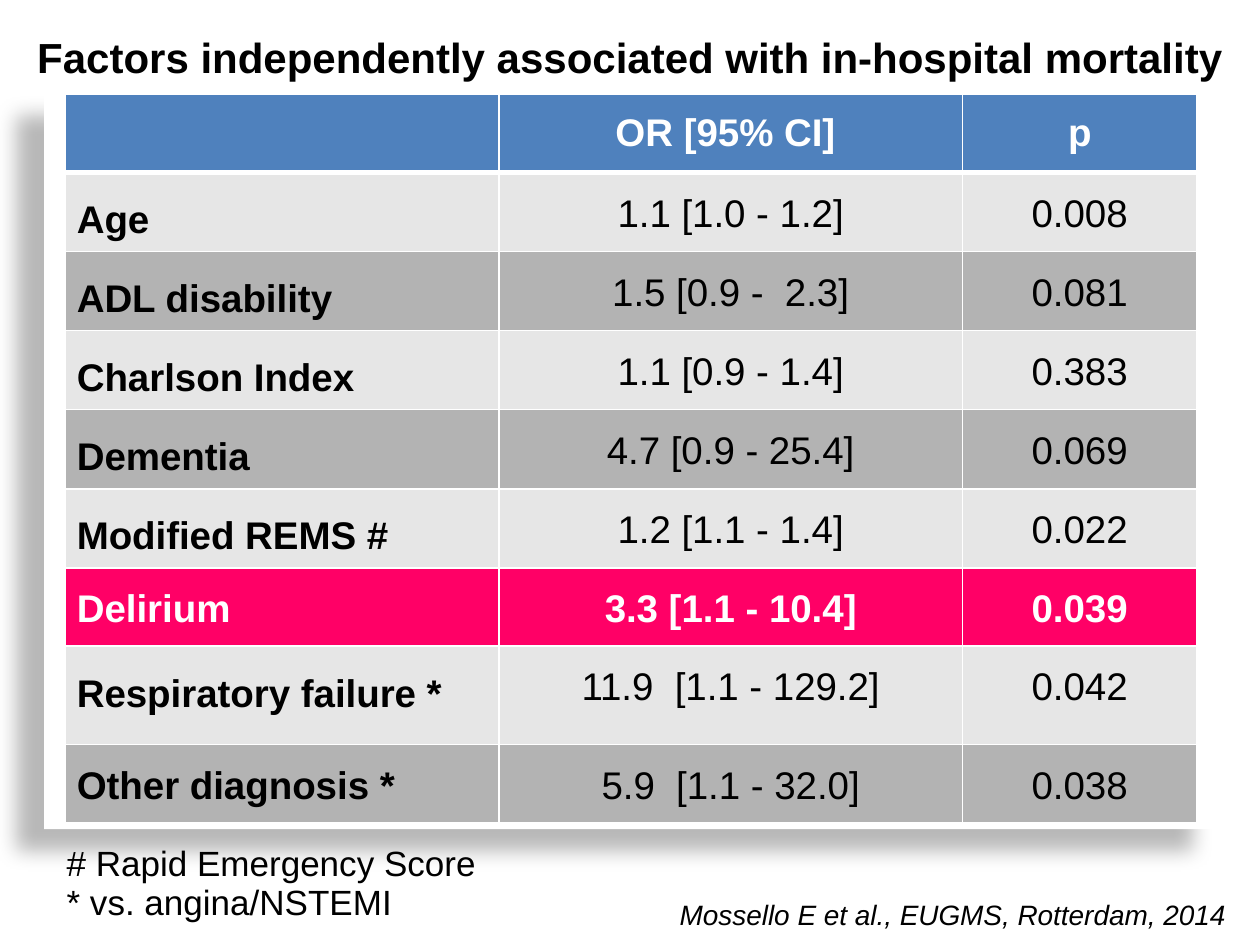
from dataclasses import dataclass

from lxml.etree import SubElement
from pptx import Presentation
from pptx.dml.color import RGBColor as RGB
from pptx.enum.shapes import MSO_SHAPE as Shape
from pptx.enum.text import MSO_ANCHOR as Anchor, MSO_AUTO_SIZE as AutoSize, PP_ALIGN as Align
from pptx.oxml.ns import qn
from pptx.util import Pt


@dataclass(frozen=True)
class Theme:
    font: str = "Arial"
    black: str = "000000"
    white: str = "FFFFFF"
    header: str = "4F81BD"
    light: str = "E6E6E6"
    dark: str = "B3B3B3"
    accent: str = "FF0066"
    title_size: float = 24
    table_size: float = 22
    note_size: float = 20
    source_size: float = 16
    thin: float = 0.91
    thick: float = 2.95


@dataclass(frozen=True)
class Box:
    left: float
    top: float
    width: float
    height: float

    def lengths(self) -> tuple:
        return Pt(self.left), Pt(self.top), Pt(self.width), Pt(self.height)


@dataclass(frozen=True)
class Style:
    size: float
    color: str = "000000"
    bold: bool = False
    italic: bool = False
    align: Align = Align.LEFT
    spacing: float = 1.0


@dataclass(frozen=True)
class Note:
    box: Box
    lines: tuple
    style: Style


@dataclass(frozen=True)
class Factor:
    name: str
    odds: str
    p_value: str
    height: float = 45.2
    label_inset: float = 15
    highlight: bool = False


THEME = Theme()
PANEL = Box(25.2, 54, 671.8, 419.8)
TABLE = Box(37.4, 54, 646.6, 416)
COLUMNS = (247.7, 265, 133.9)
HEADINGS = ("", "OR [95% CI] ", "p")
COMPACT = 44.6
VALUE_INSET = 11.5

NOTES = (
    Note(Box(292.3, 511.2, 415.4, 24.5), ("Mossello E et al., EUGMS, Rotterdam, 2014",),
         Style(THEME.source_size, italic=True, align=Align.RIGHT, spacing=0.93)),
    Note(Box(0, 14.4, 720, 36), ("Factors independently associated with in-hospital mortality",),
         Style(THEME.title_size, bold=True, align=Align.CENTER)),
    Note(Box(31, 479.5, 301.7, 51.8), ("# Rapid Emergency Score", "* vs. angina/NSTEMI"),
         Style(THEME.note_size, spacing=0.93)),
)

FACTORS = (
    Factor("Age", "1.1 [1.0 - 1.2]", "0.008"),
    Factor("ADL disability", "1.5 [0.9 -  2.3]", "0.081"),
    Factor("Charlson Index", "1.1 [0.9 - 1.4]", "0.383"),
    Factor("Dementia", "4.7 [0.9 - 25.4]", "0.069"),
    Factor("Modified REMS #", "1.2 [1.1 - 1.4]", "0.022"),
    Factor("Delirium", "3.3 [1.1 - 10.4]", "0.039", COMPACT, VALUE_INSET, True),
    Factor("Respiratory failure *", "11.9  [1.1 - 129.2]", "0.042", 56.2),
    Factor("Other diagnosis *", "5.9  [1.1 - 32.0]", "0.038", COMPACT, VALUE_INSET),
)


def write_line(p, text: str, style: Style) -> None:
    p.alignment = style.align
    p.line_spacing = style.spacing
    r = p.add_run()
    r.text = text
    r.font.name = THEME.font
    r.font.size = Pt(style.size)
    r.font.bold = style.bold
    r.font.italic = style.italic
    r.font.color.rgb = RGB.from_string(style.color)


def add_note(slide, note: Note) -> None:
    tf = slide.shapes.add_textbox(*note.box.lengths()).text_frame
    tf.word_wrap = True
    tf.auto_size = AutoSize.SHAPE_TO_FIT_TEXT
    for i, line in enumerate(note.lines):
        p = tf.add_paragraph() if i else tf.paragraphs[0]
        write_line(p, line, note.style)


def add_panel(slide, box: Box) -> None:
    sp = slide.shapes.add_shape(Shape.RECTANGLE, *box.lengths())
    sp.fill.solid()
    sp.fill.fore_color.rgb = RGB.from_string(THEME.white)
    sp.line.fill.background()
    sp.shadow.inherit = False
    effects = sp._element.spPr.find(qn("a:effectLst"))
    shadow = SubElement(effects, qn("a:outerShdw"), blurRad=str(Pt(11.8)), dist=str(Pt(19.7)),
                        dir=str(141 * 60000), algn="ctr", rotWithShape="0")
    color = SubElement(shadow, qn("a:srgbClr"), val=THEME.black)
    SubElement(color, qn("a:alpha"), val="28000")


def set_borders(cell, top: float, bottom: float) -> None:
    tc_pr = cell._tc.get_or_add_tcPr()
    widths = {"lnL": THEME.thin, "lnR": THEME.thin, "lnT": top, "lnB": bottom}
    for i, (side, width) in enumerate(widths.items()):
        ln = SubElement(tc_pr, qn(f"a:{side}"), w=str(Pt(width)))
        fill = SubElement(ln, qn("a:solidFill"))
        SubElement(fill, qn("a:srgbClr"), val=THEME.white)
        tc_pr.insert(i, ln)


def fill_cell(cell, text: str, style: Style, fill: str, inset: float) -> None:
    cell.fill.solid()
    cell.fill.fore_color.rgb = RGB.from_string(fill)
    cell.vertical_anchor = Anchor.TOP
    cell.margin_left = cell.margin_right = Pt(6.5)
    cell.margin_top, cell.margin_bottom = Pt(inset), Pt(3.6)
    if text:
        write_line(cell.text_frame.paragraphs[0], text, style)


def add_factor_table(slide) -> None:
    table = slide.shapes.add_table(len(FACTORS) + 1, len(COLUMNS), *TABLE.lengths()).table
    table.first_row = table.horz_banding = False
    for column, width in zip(table.columns, COLUMNS):
        column.width = Pt(width)

    table.rows[0].height = Pt(COMPACT)
    heading = Style(THEME.table_size, THEME.white, bold=True, align=Align.CENTER, spacing=0.76)
    for j, text in enumerate(HEADINGS):
        cell = table.cell(0, j)
        fill_cell(cell, text, heading, THEME.header, 15)
        set_borders(cell, THEME.thin, THEME.thick)

    for i, factor in enumerate(FACTORS, start=1):
        table.rows[i].height = Pt(factor.height)
        band = THEME.light if i % 2 else THEME.dark
        fill = THEME.accent if factor.highlight else band
        color = THEME.white if factor.highlight else THEME.black
        label = Style(THEME.table_size, color, bold=True)
        value = Style(THEME.table_size, color, bold=factor.highlight, align=Align.CENTER)
        for j, text in enumerate((factor.name, factor.odds, factor.p_value)):
            cell = table.cell(i, j)
            style, inset = (value, VALUE_INSET) if j else (label, factor.label_inset)
            fill_cell(cell, text, style, fill, inset)
            set_borders(cell, THEME.thick if i == 1 else THEME.thin, THEME.thin)


def main() -> None:
    prs = Presentation()
    prs.slide_width, prs.slide_height = Pt(720), Pt(540)
    slide = prs.slides.add_slide(prs.slide_layouts[6])
    source, title, legend = NOTES
    add_panel(slide, PANEL)
    add_note(slide, source)
    add_note(slide, title)
    add_factor_table(slide)
    add_note(slide, legend)
    prs.save("out.pptx")


if __name__ == "__main__":
    main()
